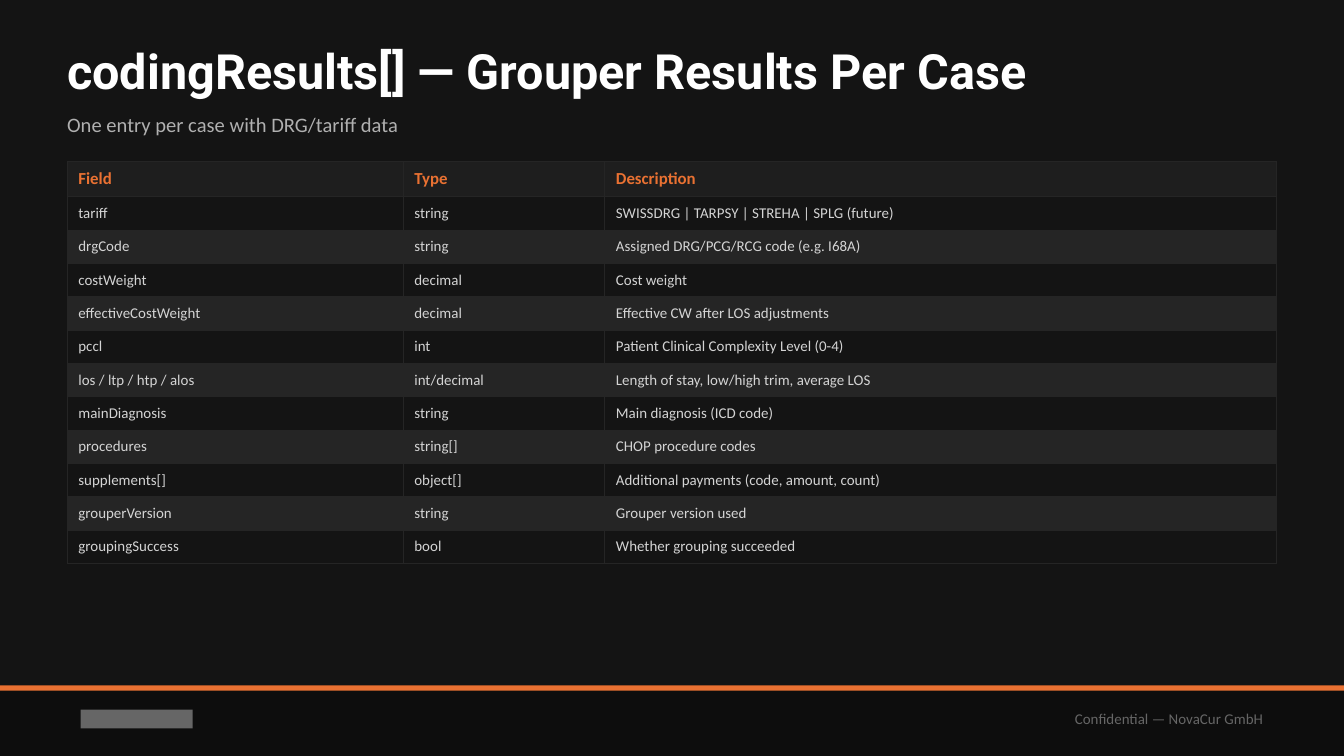
"""Build the slide describing the codingResults[] fields."""
from lxml import etree
from pptx import Presentation
from pptx.dml.color import RGBColor
from pptx.enum import shapes, text
from pptx.oxml import ns
from pptx.util import Pt

TITLE = "codingResults[] — Grouper Results Per Case"
SUBTITLE = "One entry per case with DRG/tariff data"
HEADER = ("Field", "Type", "Description")
FIELDS = [
    ("tariff", "string", "SWISSDRG | TARPSY | STREHA | SPLG (future)"),
    ("drgCode", "string", "Assigned DRG/PCG/RCG code (e.g. I68A)"),
    ("costWeight", "decimal", "Cost weight"),
    ("effectiveCostWeight", "decimal", "Effective CW after LOS adjustments"),
    ("pccl", "int", "Patient Clinical Complexity Level (0-4)"),
    ("los / ltp / htp / alos", "int/decimal", "Length of stay, low/high trim, average LOS"),
    ("mainDiagnosis", "string", "Main diagnosis (ICD code)"),
    ("procedures", "string[]", "CHOP procedure codes"),
    ("supplements[]", "object[]", "Additional payments (code, amount, count)"),
    ("grouperVersion", "string", "Grouper version used"),
    ("groupingSuccess", "bool", "Whether grouping succeeded"),
]
CONFIDENTIAL = "Confidential — NovaCur GmbH"

WHITE = RGBColor(0xFF, 0xFF, 0xFF)
ORANGE = RGBColor(0xE9, 0x71, 0x32)
LIGHT = RGBColor(0xD4, 0xD4, 0xD4)
SILVER = RGBColor(0xB0, 0xB0, 0xB0)
GREY = RGBColor(0x66, 0x66, 0x66)
BACKGROUND = RGBColor(0x14, 0x14, 0x14)
HEADER_FILL = RGBColor(0x1E, 0x1E, 0x1E)
STRIPE = RGBColor(0x25, 0x25, 0x25)
FOOTER_FILL = RGBColor(0x0D, 0x0D, 0x0D)

WIDTH, HEIGHT, MARGIN = 720, 405, 36
CONTENT_WIDTH = WIDTH - 2 * MARGIN
COLUMNS = (180, 108, 360)
TABLE_TOP, HEADER_HEIGHT, ROW_HEIGHT = 86.4, 18.75, 17.87
FOOTER_TOP = 367.2


def add_run(paragraph, content, name, size, color, bold=False):
    run = paragraph.add_run()
    run.text = content
    run.font.name, run.font.size, run.font.bold = name, Pt(size), bold
    run.font.color.rgb = color


def place_text(shape, box, run, inset=None, align=text.PP_ALIGN.LEFT):
    shape.left, shape.top, shape.width, shape.height = map(Pt, box)
    frame = shape.text_frame
    frame.auto_size = text.MSO_AUTO_SIZE.NONE
    frame.word_wrap = True
    frame.vertical_anchor = text.MSO_ANCHOR.MIDDLE
    if inset is not None:
        frame.margin_left = frame.margin_right = Pt(inset)
        frame.margin_top = frame.margin_bottom = Pt(inset)
    paragraph = frame.paragraphs[0]
    paragraph.alignment = align
    add_run(paragraph, *run)


def add_text(slide, box, *options):
    place_text(slide.shapes.add_textbox(*map(Pt, box)), box, *options)


def add_rectangle(slide, box, color):
    shape = slide.shapes.add_shape(shapes.MSO_SHAPE.RECTANGLE, *map(Pt, box))
    shape.shadow.inherit = False
    shape.fill.solid()
    shape.fill.fore_color.rgb = color
    shape.line.fill.background()


def add_borders(cell, color):
    properties = cell._tc.get_or_add_tcPr()
    for side in ("a:lnL", "a:lnR", "a:lnT", "a:lnB"):
        line = etree.SubElement(properties, ns.qn(side), w=str(Pt(0.5)))
        fill = etree.SubElement(line, ns.qn("a:solidFill"))
        etree.SubElement(fill, ns.qn("a:srgbClr"), val=str(color))


def format_cell(cell, content, fill, size, color, bold):
    add_borders(cell, STRIPE)
    cell.fill.solid()
    cell.fill.fore_color.rgb = fill
    cell.margin_left = cell.margin_right = Pt(6)
    cell.margin_top = cell.margin_bottom = Pt(4)
    cell.vertical_anchor = text.MSO_ANCHOR.MIDDLE
    add_run(cell.text_frame.paragraphs[0], content, "Calibri", size, color, bold)


def add_field_table(slide):
    rows = [HEADER, *FIELDS]
    height = HEADER_HEIGHT + len(FIELDS) * ROW_HEIGHT
    box = (MARGIN, TABLE_TOP, CONTENT_WIDTH, height)
    table = slide.shapes.add_table(len(rows), len(COLUMNS), *map(Pt, box)).table
    table.horz_banding = False
    for column, width in zip(table.columns, COLUMNS):
        column.width = Pt(width)
    for index, row in enumerate(rows):
        if index == 0:
            height, style = HEADER_HEIGHT, (HEADER_FILL, 9, ORANGE, True)
        else:
            fill = BACKGROUND if index % 2 else STRIPE
            height, style = ROW_HEIGHT, (fill, 8, LIGHT, False)
        table.rows[index].height = Pt(height)
        for cell, content in zip(table.rows[index].cells, row):
            format_cell(cell, content, *style)


def main():
    presentation = Presentation()
    presentation.slide_width, presentation.slide_height = Pt(WIDTH), Pt(HEIGHT)
    slide = presentation.slides.add_slide(presentation.slide_layouts[5])
    slide.background.fill.solid()
    slide.background.fill.fore_color.rgb = BACKGROUND

    place_text(slide.shapes.title, (MARGIN, 18, CONTENT_WIDTH, 39.6),
               (TITLE, "Roboto", 26, WHITE, True), 0)
    add_text(slide, (MARGIN, 54, CONTENT_WIDTH, 25.2),
             (SUBTITLE, "Calibri", 11, SILVER), 0)
    add_field_table(slide)

    add_rectangle(slide, (0, FOOTER_TOP, WIDTH, HEIGHT - FOOTER_TOP), FOOTER_FILL)
    add_rectangle(slide, (0, FOOTER_TOP, WIDTH, 2.88), ORANGE)
    add_rectangle(slide, (43.2, 380.2, 60, 10), GREY)
    add_text(slide, (WIDTH - MARGIN - 288, 370.8, 288, 28.8),
             (CONFIDENTIAL, "Calibri", 8, GREY), None, text.PP_ALIGN.RIGHT)
    presentation.save("out.pptx")


if __name__ == "__main__":
    main()
